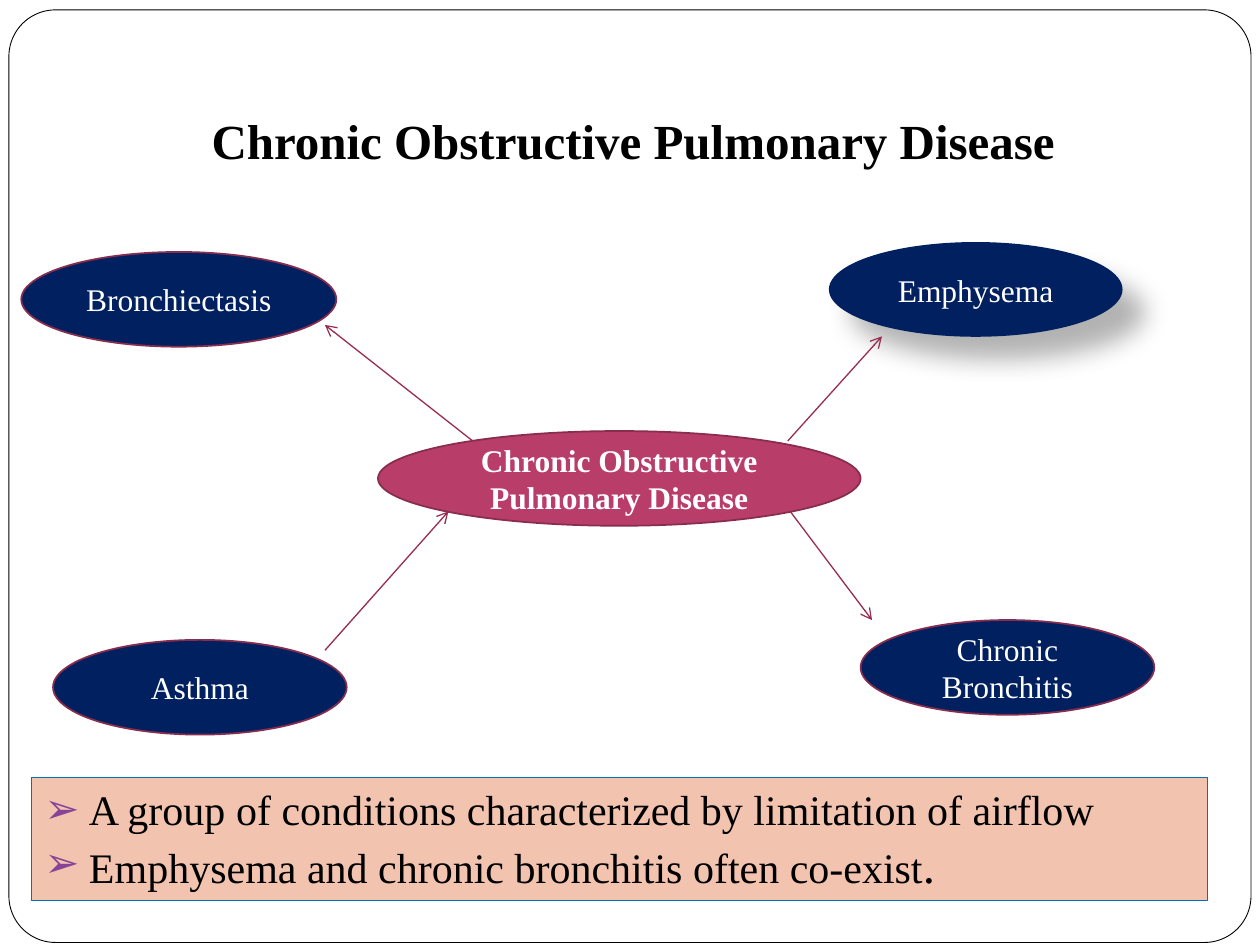
import pptx
import pptx.dml.color
import pptx.enum.shapes
import pptx.enum.text
import pptx.oxml
import pptx.oxml.ns
import pptx.util
from lxml import etree
from pptx.util import Cm, Pt

FONT = "Times New Roman"
COLORS = {
    "black": "000000", "white": "FFFFFF", "navy": "002060",
    "rose": "B83D68", "outline": "882D4D", "arrow": "982C52",
    "peach": "F2C4AF", "blue": "0070C0", "bullet": "874396",
}
RGB = {name: pptx.dml.color.RGBColor.from_string(value) for name, value in COLORS.items()}
SHAPE = pptx.enum.shapes.MSO_SHAPE
ALIGN = pptx.enum.text.PP_ALIGN
ANCHOR = pptx.enum.text.MSO_ANCHOR
qn = pptx.oxml.ns.qn


def set_font(paragraph, size, color, bold=False):
    font = paragraph.font
    font.name, font.size, font.bold = FONT, Pt(size), bold
    font.color.rgb = RGB[color]


def add_xml(parent, tag, **attributes):
    return etree.SubElement(parent, qn(tag), attributes)


prs = pptx.Presentation()
prs.slide_width, prs.slide_height = Cm(25.4), Cm(19.05)
slide = prs.slides.add_slide(prs.slide_layouts[1])

# Rounded page frame
frame = slide.shapes.add_shape(SHAPE.ROUNDED_RECTANGLE, Cm(0.18), Cm(0.2), Cm(25.04), Cm(18.8))
frame.adjustments[0] = 0.05
frame.shadow.inherit = False
frame.fill.background()
frame.line.color.rgb = RGB["black"]
frame.line.width = Pt(0.5)

# Title
title = slide.shapes.title
title.left, title.top, title.width, title.height = Cm(4.01), Cm(2.11), Cm(19.35), Cm(2.24)
title.text_frame.text = "Chronic Obstructive Pulmonary Disease"
title.text_frame.vertical_anchor = ANCHOR.TOP
title.text_frame.auto_size = pptx.enum.text.MSO_AUTO_SIZE.NONE
title.text_frame.paragraphs[0].alignment = ALIGN.LEFT
set_font(title.text_frame.paragraphs[0], 28, "black", bold=True)

# Disease ellipses: text, left, top, width, fill, outline, bold
diseases = [
    ("Chronic Obstructive Pulmonary Disease", 7.62, 8.69, 9.73, "rose", "outline", True),
    ("Emphysema", 16.71, 4.88, 5.92, "navy", None, False),
    ("Bronchiectasis", 0.43, 5.08, 6.35, "navy", "outline", False),
    ("Chronic Bronchitis", 17.35, 12.5, 5.92, "navy", "outline", False),
    ("Asthma", 1.07, 12.9, 5.92, "navy", "outline", False),
]
for text, left, top, width, fill, outline, bold in diseases:
    disease = slide.shapes.add_shape(SHAPE.OVAL, Cm(left), Cm(top), Cm(width), Cm(1.91))
    disease.shadow.inherit = False
    disease.fill.solid()
    disease.fill.fore_color.rgb = RGB[fill]
    if outline:
        disease.line.color.rgb = RGB[outline]
        disease.line.width = Pt(1)
    else:
        disease.line.fill.background()
        effects = disease.element.spPr.find(qn("a:effectLst"))
        shadow = add_xml(effects, "a:outerShdw", blurRad=str(Pt(15)), dist=str(Pt(18)),
                         dir="2700000", algn="tl", rotWithShape="0")
        shadow_color = add_xml(shadow, "a:srgbClr", val=COLORS["black"])
        add_xml(shadow_color, "a:alpha", val="30000")
    disease.text_frame.text = text
    disease.text_frame.vertical_anchor = ANCHOR.MIDDLE
    disease.text_frame.paragraphs[0].alignment = ALIGN.CENTER
    set_font(disease.text_frame.paragraphs[0], 18, "white", bold)

# Arrows between the diseases: start x, y, end x, y
arrows = [
    (15.88, 8.89, 17.78, 6.78),
    (9.53, 8.89, 6.55, 6.55),
    (15.93, 10.31, 17.58, 12.5),
    (6.55, 13.11, 9.04, 10.31),
]
for ends in arrows:
    arrow = slide.shapes.add_connector(pptx.enum.shapes.MSO_CONNECTOR.STRAIGHT, *map(Cm, ends))
    arrow.line.color.rgb = RGB["arrow"]
    arrow.line.width = Pt(0.75)
    add_xml(arrow.line._get_or_add_ln(), "a:tailEnd", type="arrow")
    add_xml(arrow.element.spPr, "a:effectLst")

# Summary list
summary = slide.placeholders[1]
summary.left, summary.top, summary.width, summary.height = Cm(0.64), Cm(15.67), Cm(23.7), Cm(2.49)
summary.fill.solid()
summary.fill.fore_color.rgb = RGB["peach"]
summary.line.color.rgb = RGB["blue"]
summary.line.width = Pt(0.75)
summary.text_frame.auto_size = pptx.enum.text.MSO_AUTO_SIZE.NONE
summary.text_frame.text = (
    "A group of conditions characterized by limitation of airflow\n"
    "Emphysema and chronic bronchitis often co-exist"
)
for point in summary.text_frame.paragraphs:
    properties = point._p.get_or_add_pPr()
    properties.set("marL", str(Cm(0.9)))
    properties.set("indent", str(-Cm(0.9)))
    bullet_color = add_xml(properties, "a:buClr")
    add_xml(bullet_color, "a:srgbClr", val=COLORS["bullet"])
    add_xml(properties, "a:buChar", char="➢")
    point.space_before = Pt(0)
    set_font(point, 24, "black")
full_stop = summary.text_frame.paragraphs[1].add_run()
full_stop.text = "."
full_stop.font.size = Pt(28)

prs.save("out.pptx")
